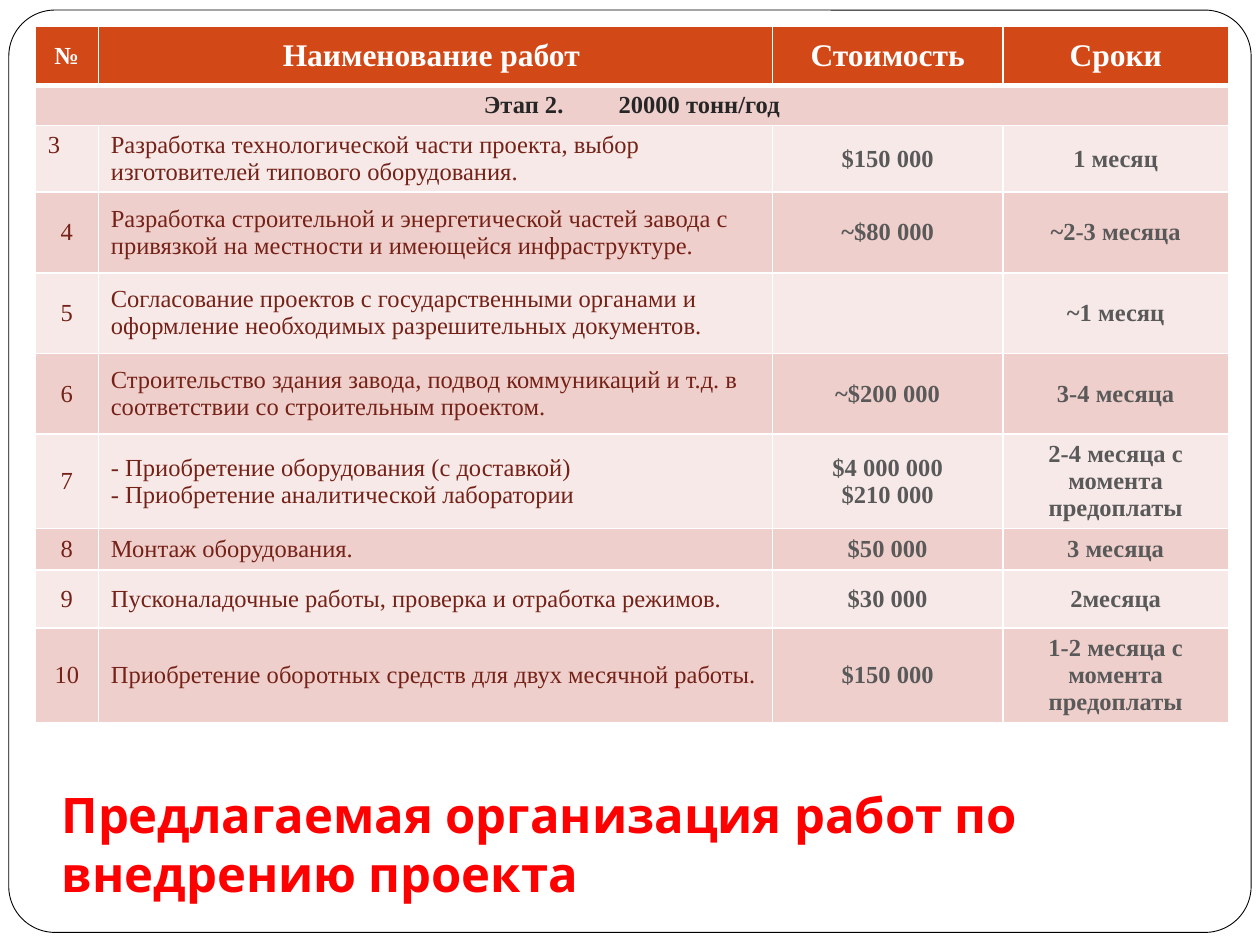
from lxml.etree import SubElement
from pptx import Presentation
from pptx.dml.color import RGBColor
from pptx.enum.shapes import MSO_SHAPE
from pptx.enum.text import MSO_ANCHOR as Anchor, PP_ALIGN as Align
from pptx.oxml import parse_xml
from pptx.oxml.ns import nsdecls, qn
from pptx.util import Inches, Pt

TITLE = "Предлагаемая организация работ по внедрению проекта"
HEADINGS = ("№", "Наименование работ ", "Стоимость", "Сроки")
STAGE = "Этап 2.\t20000 тонн/год"
WORKS = [
    ("3", "Разработка технологической части проекта, выбор изготовителей типового оборудования.",
     "$150 000", "1 месяц"),
    ("4", "Разработка строительной и энергетической частей завода с привязкой на местности "
          "и имеющейся инфраструктуре.", "~$80 000", "~2-3 месяца"),
    ("5", "Согласование проектов с государственными органами и оформление необходимых "
          "разрешительных документов.", "", "~1 месяц"),
    ("6", "Строительство здания завода, подвод коммуникаций и т.д. в соответствии "
          "со строительным проектом.", "~$200 000", "3-4 месяца"),
    ("7", "- Приобретение оборудования (с доставкой)\n- Приобретение аналитической лаборатории",
     "$4 000 000\n$210 000", "2-4 месяца с момента предоплаты"),
    ("8", "Монтаж оборудования.", "$50 000", "3 месяца"),
    ("9", "Пусконаладочные работы, проверка и отработка режимов.", "$30 000", "2месяца"),
    ("10", "Приобретение оборотных средств для двух месячной работы.",
     "$150 000", "1-2 месяца с момента предоплаты"),
]
COLUMN_WIDTHS = (0.5, 5.35, 1.83, 1.79)
ROW_HEIGHTS = (0.47, 0.31, 0.53, 0.64, 0.64, 0.64, 0.75, 0.33, 0.46, 0.75)
BANDS = ("F7E9E8", "EFCFCC")
STAGE_GAP = 1.07
TABLE_FONT = "Times New Roman"


def rgb(value):
    return RGBColor.from_string(value)


def format_text(frame, font, size, color, bold, align):
    for paragraph in frame.paragraphs:
        paragraph.alignment = align
        for run in paragraph.runs:
            run.font.name, run.font.size, run.font.bold = font, Pt(size), bold
            run.font.color.rgb = rgb(color)


def set_borders(cell, top=1, bottom=1):
    """Draw white cell borders; widths are in points."""
    properties = cell._tc.get_or_add_tcPr()
    widths = (("lnL", 1), ("lnR", 1), ("lnT", top), ("lnB", bottom))
    for position, (side, width) in enumerate(widths):
        properties.insert(position, parse_xml(
            f'<a:{side} {nsdecls("a")} w="{Pt(width)}"><a:solidFill>'
            f'<a:srgbClr val="FFFFFF"/></a:solidFill></a:{side}>'))


def fill_cell(cell, text, fill, size=14, color="595959", bold=True,
              align=Align.CENTER, anchor=Anchor.MIDDLE, **borders):
    cell.text_frame.text = text
    cell.vertical_anchor = anchor
    format_text(cell.text_frame, TABLE_FONT, size, color, bold, align)
    cell.fill.solid()
    cell.fill.fore_color.rgb = rgb(fill)
    set_borders(cell, **borders)


def add_frame(slide):
    frame = slide.shapes.add_shape(MSO_SHAPE.ROUNDED_RECTANGLE, Inches(0.07), Inches(0.08),
                                   Inches(9.86), Inches(7.32))
    frame.adjustments[0] = 0.05
    frame.shadow.inherit = False
    frame.fill.solid()
    frame.fill.fore_color.rgb = rgb("FFFFFF")
    frame.line.color.rgb = rgb("000000")
    frame.line.width = Pt(0.5)


def add_works_table(slide):
    table = slide.shapes.add_table(
        len(ROW_HEIGHTS), len(COLUMN_WIDTHS), Inches(0.28), Inches(0.21),
        Inches(sum(COLUMN_WIDTHS)), Inches(sum(ROW_HEIGHTS))).table
    for column, width in zip(table.columns, COLUMN_WIDTHS):
        column.width = Inches(width)
    for row, height in zip(table.rows, ROW_HEIGHTS):
        row.height = Inches(height)

    for column, heading in enumerate(HEADINGS):
        fill_cell(table.cell(0, column), heading, "D34817", size=18 if column else 14,
                  color="FFFFFF", bottom=3)

    stage = table.cell(1, 0)
    stage.merge(table.cell(1, len(HEADINGS) - 1))
    fill_cell(stage, STAGE, BANDS[1], color="262626", anchor=Anchor.TOP, top=3)
    tabs = SubElement(stage.text_frame.paragraphs[0]._p.get_or_add_pPr(), qn("a:tabLst"))
    SubElement(tabs, qn("a:tab"), pos=str(Inches(STAGE_GAP)), algn="l")

    for index, work in enumerate(WORKS):
        for column, text in enumerate(work):
            first_number = index == 0 and column == 0
            detail = {"color": "742217", "bold": False} if column < 2 else {}
            fill_cell(table.cell(index + 2, column), text, BANDS[index % 2],
                      align=Align.LEFT if column == 1 or first_number else Align.CENTER,
                      anchor=Anchor.TOP if first_number else Anchor.MIDDLE, **detail)


def add_title(slide):
    title = slide.shapes.add_textbox(Inches(0.39), Inches(6.33), Inches(9.22), Inches(0.88))
    title.text_frame.word_wrap = True
    title.text_frame.vertical_anchor = Anchor.BOTTOM
    title.text_frame.text = TITLE
    format_text(title.text_frame, "Karla", 28, "FF0000", True, Align.LEFT)


def main():
    deck = Presentation()
    deck.slide_width, deck.slide_height = Inches(10), Inches(7.5)
    slide = deck.slides.add_slide(deck.slide_layouts[6])
    add_frame(slide)
    add_works_table(slide)
    add_title(slide)
    deck.save("out.pptx")


if __name__ == "__main__":
    main()
